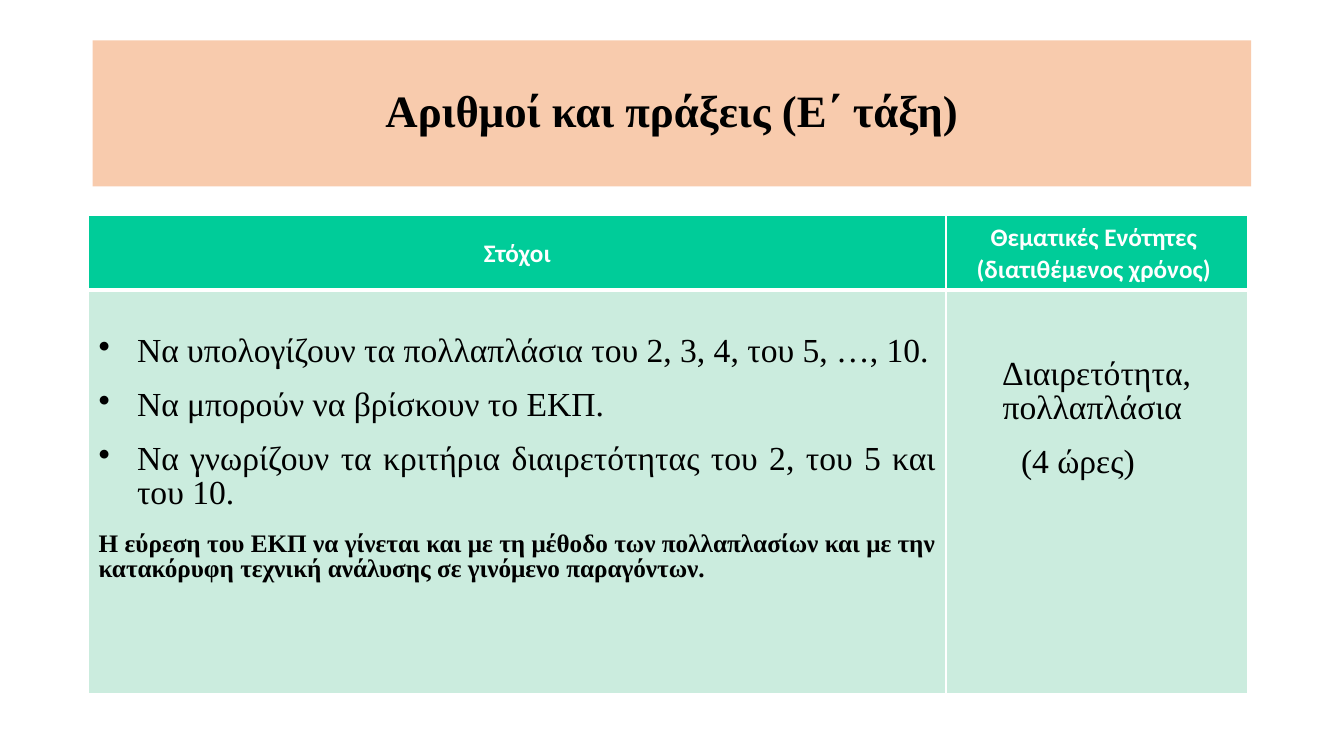
"""Build a slide of learning goals and topics on numbers and operations."""
import pptx
import pptx.util
import pptx.dml.color
import pptx.enum.shapes
import pptx.enum.text
import pptx.oxml
import pptx.oxml.ns

Inches = pptx.util.Inches
Pt = pptx.util.Pt
RGBColor = pptx.dml.color.RGBColor
ALIGN = pptx.enum.text.PP_ALIGN
MIDDLE = pptx.enum.text.MSO_ANCHOR.MIDDLE

PEACH = RGBColor(0xF8, 0xCB, 0xAD)
GREEN = RGBColor(0x00, 0xCC, 0x99)
MINT = RGBColor(0xCB, 0xEC, 0xDE)
WHITE = RGBColor(0xFF, 0xFF, 0xFF)
BLACK = RGBColor(0x00, 0x00, 0x00)
SERIF = "Times New Roman"
THIN, THICK = 0.91, 2.95

HEADERS = ["Στόχοι", "Θεματικές Ενότητες \n(διατιθέμενος χρόνος) "]
GOALS = [
    "Να υπολογίζουν τα πολλαπλάσια του 2, 3, 4, του 5, …, 10.",
    "Να μπορούν να βρίσκουν το ΕΚΠ.",
    "Να γνωρίζουν τα κριτήρια διαιρετότητας του 2, του 5 και του 10.",
]
METHOD = (
    "Η εύρεση του ΕΚΠ να γίνεται και με τη μέθοδο των πολλαπλασίων "
    "και με την κατακόρυφη τεχνική ανάλυσης σε γινόμενο παραγόντων."
)
TOPICS = ["Διαιρετότητα, πολλαπλάσια ", "(4 ώρες) \t"]


def style_paragraph(paragraph, size, align, spacing, after=0, bold=False, color=BLACK, face=SERIF):
    """Set the spacing, alignment and font of one paragraph."""
    paragraph.alignment = align
    paragraph.line_spacing = spacing
    paragraph.space_after = Pt(after)
    font = paragraph.font
    font.size, font.bold, font.name = Pt(size), bold, face
    font.color.rgb = color


def add_bullet(paragraph):
    """Give a paragraph a round bullet with a hanging indent."""
    properties = paragraph._p.get_or_add_pPr()
    properties.set("marL", str(Inches(0.38)))
    properties.set("indent", str(-Inches(0.38)))
    bullet = pptx.oxml.parse_xml(f'<a:buChar {pptx.oxml.ns.nsdecls("a")} char="•"/>')
    properties.find(pptx.oxml.ns.qn("a:defRPr")).addprevious(bullet)


def style_cell(cell, fill, top_border, bottom_border, top_margin):
    """Set the white borders, fill and margins of a cell."""
    properties = cell._tc.get_or_add_tcPr()
    for side, width in zip("LRTB", (THIN, THIN, top_border, bottom_border)):
        properties.append(pptx.oxml.parse_xml(
            f'<a:ln{side} {pptx.oxml.ns.nsdecls("a")} w="{Pt(width)}">'
            f'<a:solidFill><a:srgbClr val="{WHITE}"/></a:solidFill></a:ln{side}>'))
    cell.fill.solid()
    cell.fill.fore_color.rgb = fill
    cell.margin_left = cell.margin_right = Inches(0.1)
    cell.margin_top, cell.margin_bottom = Inches(top_margin), Inches(0.05)


def add_title(slide):
    """Add the title band."""
    band = slide.shapes.add_shape(
        pptx.enum.shapes.MSO_SHAPE.RECTANGLE, Inches(0.92), Inches(0.4), Inches(11.5), Inches(1.45))
    band.shadow.inherit = False
    band.fill.solid()
    band.fill.fore_color.rgb = PEACH
    band.line.fill.background()
    band.text_frame.word_wrap = True
    band.text_frame.vertical_anchor = MIDDLE
    title = band.text_frame.paragraphs[0]
    title.text = "Αριθμοί και πράξεις (Ε΄ τάξη)"
    style_paragraph(title, 32, ALIGN.CENTER, 0.9, bold=True)


def add_goal_table(slide):
    """Add the table of goals and topics."""
    table = slide.shapes.add_table(
        2, 2, Inches(0.88), Inches(2.14), Inches(11.5), Inches(4.74)).table
    for column, width in zip(table.columns, (8.51, 2.99)):
        column.width = Inches(width)
    for row, height in zip(table.rows, (0.73, 4.01)):
        row.height = Inches(height)

    for column, header in enumerate(HEADERS):
        cell = table.cell(0, column)
        style_cell(cell, GREEN, THIN, THICK, 0.05)
        cell.vertical_anchor = MIDDLE
        cell.text = header
        for paragraph in cell.text_frame.paragraphs:
            style_paragraph(paragraph, 18, ALIGN.CENTER, 1.04, bold=True, color=WHITE, face="Calibri")

    goals, topics = table.cell(1, 0), table.cell(1, 1)
    style_cell(goals, MINT, THICK, THIN, 0.45)
    goals.text = "\n".join(GOALS + [METHOD])
    *goal_lines, method_line = goals.text_frame.paragraphs
    for paragraph in goal_lines:
        style_paragraph(paragraph, 24, ALIGN.JUSTIFY, 0.92, after=14.2)
        add_bullet(paragraph)
    style_paragraph(method_line, 18, ALIGN.JUSTIFY, 0.92, after=14.2, bold=True)

    style_cell(topics, MINT, THICK, THIN, 0.68)
    topics.text = "\n".join(TOPICS)
    for paragraph in topics.text_frame.paragraphs:
        style_paragraph(paragraph, 24, ALIGN.CENTER, 0.92, after=14.2)


def main():
    """Build and save the slide."""
    presentation = pptx.Presentation()
    presentation.slide_width, presentation.slide_height = Inches(13.34), Inches(7.5)
    slide = presentation.slides.add_slide(presentation.slide_layouts[6])
    add_title(slide)
    add_goal_table(slide)
    presentation.save("out.pptx")


if __name__ == "__main__":
    main()
